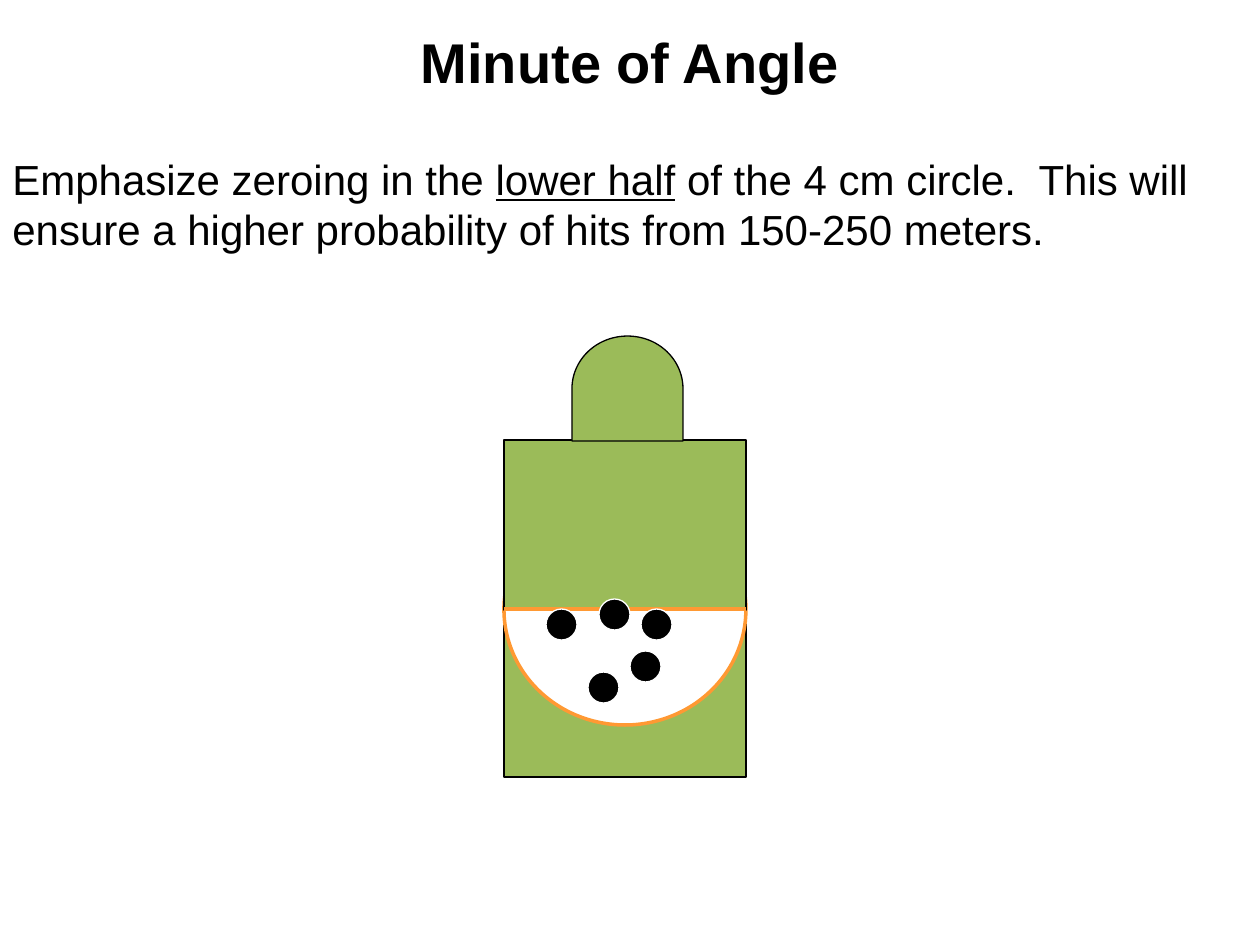
from lxml import etree
from pptx import Presentation
from pptx.dml.color import RGBColor
from pptx.enum.shapes import MSO_CONNECTOR, MSO_SHAPE
from pptx.enum.text import MSO_ANCHOR, MSO_AUTO_SIZE, PP_ALIGN
from pptx.oxml.ns import qn
from pptx.util import Emu, Pt

RECTANGLE, OVAL = MSO_SHAPE.RECTANGLE, MSO_SHAPE.OVAL
DELAY = MSO_SHAPE.FLOWCHART_DELAY
GREEN, ORANGE, BLACK, WHITE = "9BBB59", "FF9933", "000000", "FFFFFF"
SCALE = 914400 / 126  # EMU per px


def px(*lengths):
    return [Emu(round(length * SCALE)) for length in lengths]


def add_figure(kind, left, top, width, height, fill, line, weight=0.75):
    shape = page.shapes.add_shape(kind, *px(left, top, width, height))
    shape.shadow.inherit = False
    shape.fill.solid()
    shape.fill.fore_color.rgb = RGBColor.from_string(fill)
    shape.line.color.rgb = RGBColor.from_string(line)
    shape.line.width = Pt(weight)
    return shape


deck = Presentation()
deck.slide_width, deck.slide_height = px(1260, 945)
page = deck.slides.add_slide(deck.slide_layouts[5])

# Title
title = page.shapes.title
title.left, title.top, title.width, title.height = px(407, 21, 446, 81)
frame = title.text_frame
frame.word_wrap = False
frame.auto_size = MSO_AUTO_SIZE.NONE
frame.vertical_anchor = MSO_ANCHOR.TOP
para = frame.paragraphs[0]
para.text = "Minute of Angle"
para.alignment = PP_ALIGN.CENTER
para.font.name = "Arial"
para.font.size = Pt(32)
para.font.bold = True
para.font.color.rgb = RGBColor.from_string(BLACK)

# Lower target half, behind the circle
add_figure(RECTANGLE, 504, 609, 242, 168, GREEN, BLACK)

# Advice
box = page.shapes.add_textbox(*px(0, 147, 1260, 115))
box.text_frame.word_wrap = True
para = box.text_frame.paragraphs[0]
para.font.name = "Arial"
para.font.size = Pt(24)
para.font.color.rgb = RGBColor.from_string(BLACK)
para.add_run().text = "Emphasize zeroing in the "
span = para.add_run()
span.text = "lower half"
span.font.underline = True
para.add_run().text = (" of the 4 cm circle.  This will ensure a higher "
                       "probability of hits from 150-250 meters.")

# Circle, then the upper target half that covers its top, and the head
add_figure(OVAL, 504, 494, 242, 231, WHITE, ORANGE, 2)
add_figure(RECTANGLE, 504, 440, 242, 170, GREEN, BLACK)
head = add_figure(DELAY, 575, 333, 105, 111, GREEN, BLACK)
head.rotation = 270

# Line across the circle
divider = page.shapes.add_connector(MSO_CONNECTOR.STRAIGHT, *px(504, 609, 746, 609))
divider.line.color.rgb = RGBColor.from_string(ORANGE)
divider.line.width = Pt(2)
etree.SubElement(divider.element.spPr, qn("a:effectLst"))

# Hits
for left, top in [(546, 609), (599, 599), (588, 672), (630, 651), (641, 609)]:
    add_figure(OVAL, left, top, 31, 31, BLACK, WHITE)

deck.save("out.pptx")
